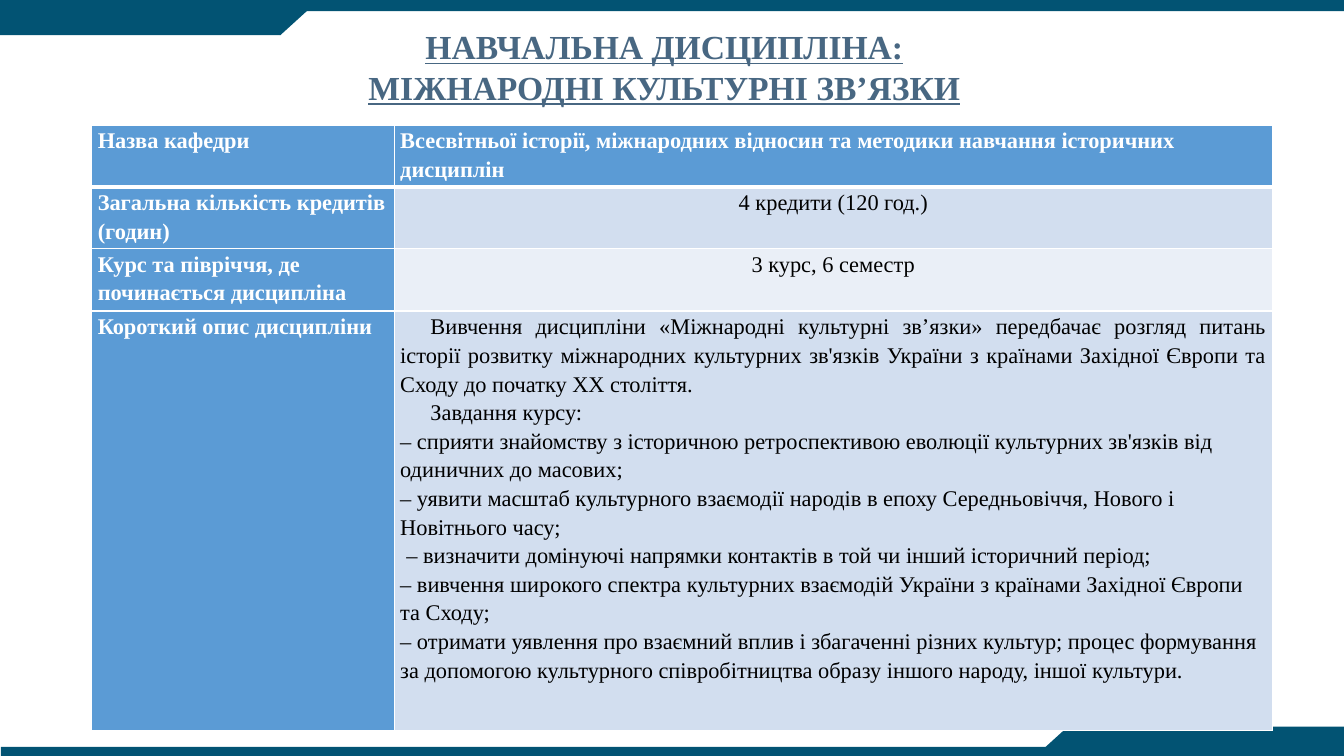
from lxml.etree import SubElement
from pptx import Presentation
from pptx.dml.color import RGBColor
from pptx.enum.shapes import MSO_SHAPE as SHAPE
from pptx.enum.text import PP_ALIGN as ALIGN
from pptx.oxml.ns import qn
from pptx.util import Inches, Pt

THEME = {
    "font": "Times New Roman",
    "title_size": 24,
    "table_size": 16,
    "band": "025373",
    "title": "486782",
    "head": "5B9BD5",
    "light": "D2DEEF",
    "pale": "EAEFF7",
    "white": "FFFFFF",
    "black": "000000",
}


def add_text(tf, text, size=THEME["table_size"], color="black", bold=False,
             underline=False, align=ALIGN.LEFT, spacing=None, indent=0):
    p = tf.paragraphs[0]
    if p.runs:
        p = tf.add_paragraph()
    p.alignment = align
    if spacing:
        p.line_spacing = spacing
    if indent:
        pPr = p._p.get_or_add_pPr()
        pPr.set("marL", "0")
        pPr.set("indent", str(Inches(indent)))
    r = p.add_run()
    r.text = text
    r.font.name = THEME["font"]
    r.font.size = Pt(size)
    r.font.bold = bold
    r.font.underline = underline
    r.font.color.rgb = RGBColor.from_string(THEME[color])


def add_border(cell, side, width):
    ln = SubElement(cell._tc.get_or_add_tcPr(), qn(f"a:{side}"), w=str(Pt(width)))
    fill = SubElement(ln, qn("a:solidFill"))
    SubElement(fill, qn("a:srgbClr"), val=THEME["white"])


prs = Presentation()
prs.slide_width, prs.slide_height = Inches(13.33), Inches(7.5)
s = prs.slides.add_slide(prs.slide_layouts[6])

bands = [
    (SHAPE.RECTANGLE, 0, 0, 13.33, 0.11, 0),
    (SHAPE.RECTANGLE, 0.01, 7.41, 13.33, 0.11, 0),
    (SHAPE.RECTANGLE, 0, 0.05, 2.78, 0.3, 0),
    (SHAPE.FLOWCHART_MERGE, 2.45, 0.05, 0.66, 0.3, 0),
    (SHAPE.RECTANGLE, 10.59, 7.21, 2.78, 0.3, 0),
    (SHAPE.FLOWCHART_MERGE, 10.26, 7.21, 0.66, 0.3, 180),
]
for kind, x, y, w, h, rotation in bands:
    sp = s.shapes.add_shape(kind, Inches(x), Inches(y), Inches(w), Inches(h))
    sp.rotation = rotation
    sp.shadow.inherit = False
    sp.fill.solid()
    sp.fill.fore_color.rgb = RGBColor.from_string(THEME["band"])
    sp.line.fill.background()

tf = s.shapes.add_textbox(Inches(0.56), Inches(0.21), Inches(12.06), Inches(0.91)).text_frame
tf.word_wrap = True
for line in ["НАВЧАЛЬНА ДИСЦИПЛІНА:", "МІЖНАРОДНІ КУЛЬТУРНІ ЗВ’ЯЗКИ"]:
    add_text(tf, line, size=THEME["title_size"], color="title", bold=True,
             underline=True, align=ALIGN.CENTER)

head = {"color": "white", "bold": True}
center = {"align": ALIGN.CENTER}
intro = {"align": ALIGN.JUSTIFY, "indent": 0.3}
rows = [
    ("Назва кафедри", "head", [
        ("Всесвітньої історії, міжнародних відносин та методики навчання історичних дисциплін", head)]),
    ("Загальна кількість кредитів (годин)", "light", [("4 кредити (120 год.)", center)]),
    ("Курс та півріччя, де починається дисципліна", "pale", [("3 курс, 6 семестр", center)]),
    ("Короткий опис дисципліни", "light", [
        ("Вивчення дисципліни «Міжнародні культурні зв’язки» передбачає розгляд питань історії розвитку "
         "міжнародних культурних зв'язків України з країнами Західної Європи та Сходу до початку XX століття.",
         intro),
        ("Завдання курсу:", intro),
        ("– сприяти знайомству з історичною ретроспективою еволюції культурних зв'язків від "
         "одиничних до масових;", {}),
        ("– уявити масштаб культурного взаємодії народів в епоху Середньовіччя, Нового і Новітнього часу;", {}),
        ("– визначити домінуючі напрямки контактів в той чи інший історичний період;", {"indent": 0.06}),
        ("– вивчення широкого спектра культурних взаємодій України з країнами Західної Європи та Сходу;", {}),
        ("– отримати уявлення про взаємний вплив і збагаченні різних культур; процес формування "
         "за допомогою культурного співробітництва образу іншого народу, іншої культури.", {}),
    ]),
]

table = s.shapes.add_table(4, 2, Inches(0.91), Inches(1.24), Inches(11.71), Inches(6)).table
for column, width in zip(table.columns, [3, 8.71]):
    column.width = Inches(width)
for row, height in zip(table.rows, [0.61, 0.61, 0.62, 4.16]):
    row.height = Inches(height)

for i, (label, fill, content) in enumerate(rows):
    for j, (color, paragraphs) in enumerate([("head", [(label, head)]), (fill, content)]):
        cell = table.cell(i, j)
        cell.margin_left = cell.margin_right = Inches(0.06)
        cell.margin_top = cell.margin_bottom = 0
        for side in ["lnL", "lnR", "lnT", "lnB"]:
            thick = (i, side) in [(0, "lnB"), (1, "lnT")]
            add_border(cell, side, 3 if thick else 1)
        cell.fill.solid()
        cell.fill.fore_color.rgb = RGBColor.from_string(THEME[color])
        for text, style in paragraphs:
            add_text(cell.text_frame, text, spacing=1.15, **style)

prs.save("out.pptx")
